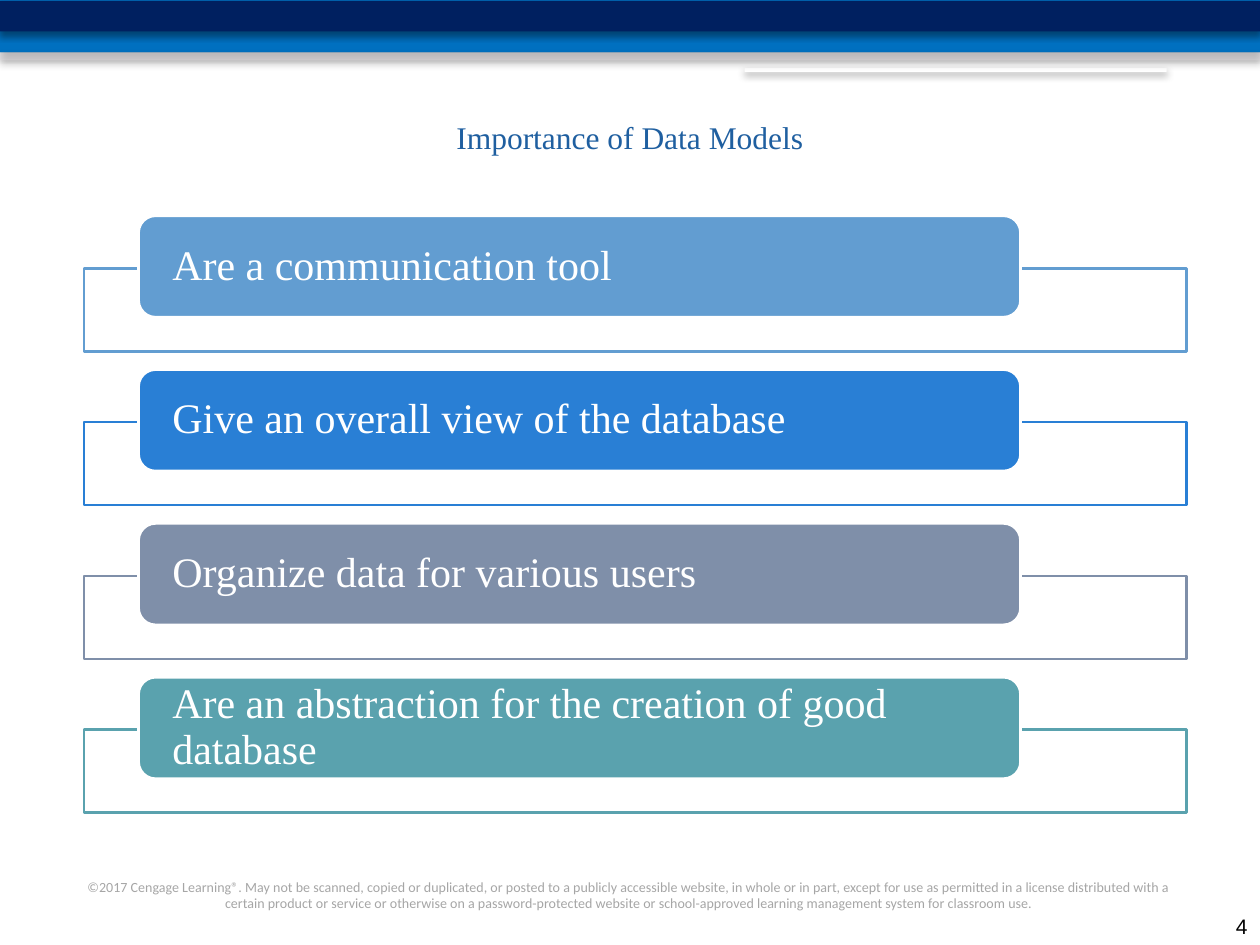
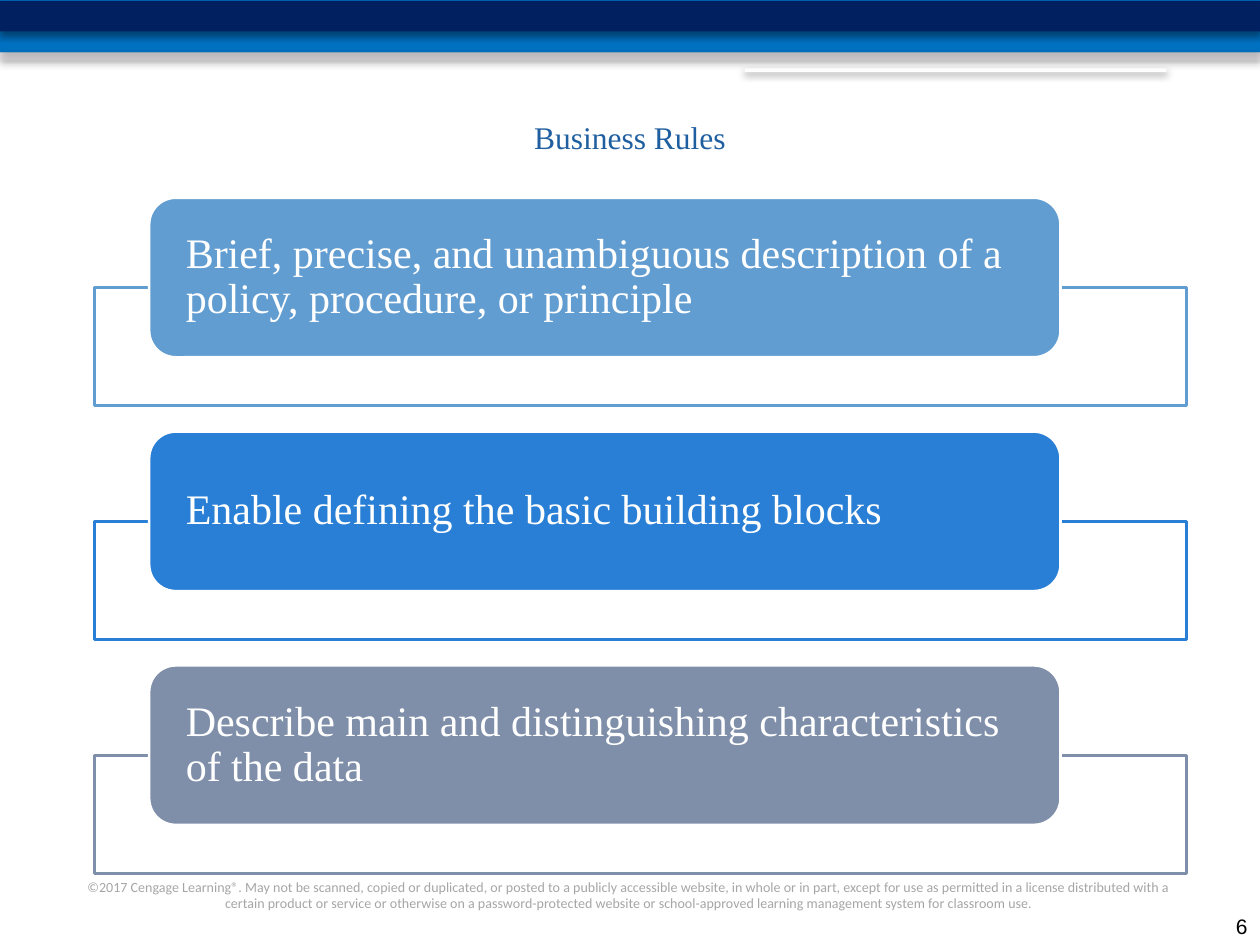
from lxml.etree import SubElement
from pptx import Presentation
from pptx.dml.color import RGBColor
from pptx.enum.shapes import MSO_SHAPE
from pptx.enum.text import MSO_ANCHOR, MSO_AUTO_SIZE, PP_ALIGN
from pptx.oxml.ns import qn
from pptx.util import Pt

COLORS = {
    "white": "FFFFFF", "black": "000000", "title": "1F5FA0",
    "navy": "002060", "blue": "0070C0", "grey": "D8D3D9", "footer": "A6A6A6",
    "sky": "629DD1", "azure": "297FD5", "slate": "7F8FA9", "teal": "5AA2AE",
}
ACCENTS = ["sky", "azure", "slate", "teal"]
SERIF = "Times New Roman"
COPYRIGHT = (
    "©2017 Cengage Learning®. May not be scanned, copied or duplicated, or posted to a "
    "publicly accessible website, in whole or in part, except for use as permitted in a "
    "license distributed with a certain product or service or otherwise on a "
    "password-protected website or school-approved learning management system for "
    "classroom use."
)


def color(name):
    return RGBColor.from_string(COLORS[name])


class Deck:
    def __init__(self):
        self.presentation = Presentation()
        self.presentation.slide_width = Pt(720)
        self.presentation.slide_height = Pt(540)
        self.slide = None

    def new_slide(self, heading, number):
        layout = self.presentation.slide_layouts[5]
        self.slide = self.presentation.slides.add_slide(layout)
        self.bands()
        self.label(COPYRIGHT, (41.8, 498.2, 635.8, 26), 8, "Calibri", "footer",
                   PP_ALIGN.CENTER, MSO_ANCHOR.TOP)
        self.title(heading)
        self.label(str(number), (684, 516, 36, 24), 12, "Arial", "black",
                   PP_ALIGN.RIGHT, MSO_ANCHOR.BOTTOM)

    def bands(self):
        self.shadow(self.block(MSO_SHAPE.ROUNDED_RECTANGLE, (425.5, 38.9, 241.2, 2.2), "white"))
        self.shadow(self.block(MSO_SHAPE.RECTANGLE, (0, 0, 720, 30), "blue"))
        self.shadow(self.block(MSO_SHAPE.RECTANGLE, (0, 0.6, 720, 17.4), "navy"))
        self.shadow(self.block(MSO_SHAPE.RECTANGLE, (0, 30, 720, 4.5), "grey", opacity=50))

    def title(self, heading):
        title = self.slide.shapes.title
        title.left, title.top, title.width, title.height = Pt(36), Pt(36), Pt(648), Pt(84)
        self.set_text(title.text_frame, heading, 18, SERIF, "title",
                      PP_ALIGN.CENTER, MSO_ANCHOR.MIDDLE)

    def label(self, text, box, size, font, ink, align, anchor):
        frame = self.slide.shapes.add_textbox(*map(Pt, box)).text_frame
        self.set_text(frame, text, size, font, ink, align, anchor)

    def set_text(self, frame, text, size, font, ink, align, anchor):
        frame.text = text
        frame.word_wrap = True
        frame.auto_size = MSO_AUTO_SIZE.NONE
        frame.vertical_anchor = anchor
        paragraph = frame.paragraphs[0]
        paragraph.alignment = align
        paragraph.font.size = Pt(size)
        paragraph.font.name = font
        paragraph.font.color.rgb = color(ink)
        return paragraph

    def block(self, kind, box, fill, line=None, opacity=100):
        block = self.slide.shapes.add_shape(kind, *map(Pt, box))
        block.shadow.inherit = False
        block.fill.solid()
        block.fill.fore_color.rgb = color(fill)
        if opacity < 100:
            tint = block._element.spPr.find(qn("a:solidFill"))[0]
            SubElement(tint, qn("a:alpha"), val=str(opacity * 1000))
        if line:
            block.line.color.rgb = color(line)
            block.line.width = Pt(1.5)
        else:
            block.line.fill.background()
        return block

    def shadow(self, block):
        effects = block._element.spPr.find(qn("a:effectLst"))
        outer = SubElement(effects, qn("a:outerShdw"), blurRad=str(int(Pt(4.1))),
                           dist=str(int(Pt(2))), dir="5400000", rotWithShape="0")
        shade = SubElement(outer, qn("a:srgbClr"), val=COLORS["black"])
        SubElement(shade, qn("a:alpha"), val="40000")

    def points(self, texts, left, top, step, frame_size, bar_size, drop):
        for row, (text, accent) in enumerate(zip(texts, ACCENTS)):
            y = top + row * step
            self.block(MSO_SHAPE.RECTANGLE, (left, y + drop, *frame_size),
                       "white", accent, opacity=90)
            bar = self.block(MSO_SHAPE.ROUNDED_RECTANGLE, (left + 31.2, y, *bar_size),
                             accent, "white")
            frame = bar.text_frame
            frame.margin_left = frame.margin_right = Pt(16.5)
            frame.margin_top = frame.margin_bottom = Pt(0)
            paragraph = self.set_text(frame, text, 24, SERIF, "white",
                                      PP_ALIGN.LEFT, MSO_ANCHOR.MIDDLE)
            paragraph.line_spacing = 0.9


def main():
    deck = Deck()
    deck.new_slide("Importance of Data Models", 4)
    deck.points(
        ["Are a communication tool",
         "Give an overall view of the database",
         "Organize data for various users",
         "Are an abstraction for the creation of good database"],
        left=48, top=123.3, step=87.9, frame_size=(630, 47.5),
        bar_size=(504, 58), drop=30)
    deck.new_slide("Business Rules", 6)
    deck.points(
        ["Brief, precise, and unambiguous description of a policy, procedure, or principle",
         "Enable defining the basic building blocks",
         "Describe main and distinguishing characteristics of the data"],
        left=54, top=113, step=133.6, frame_size=(624, 67.5),
        bar_size=(520.8, 91.2), drop=51.4)
    deck.presentation.save("out.pptx")


if __name__ == "__main__":
    main()
